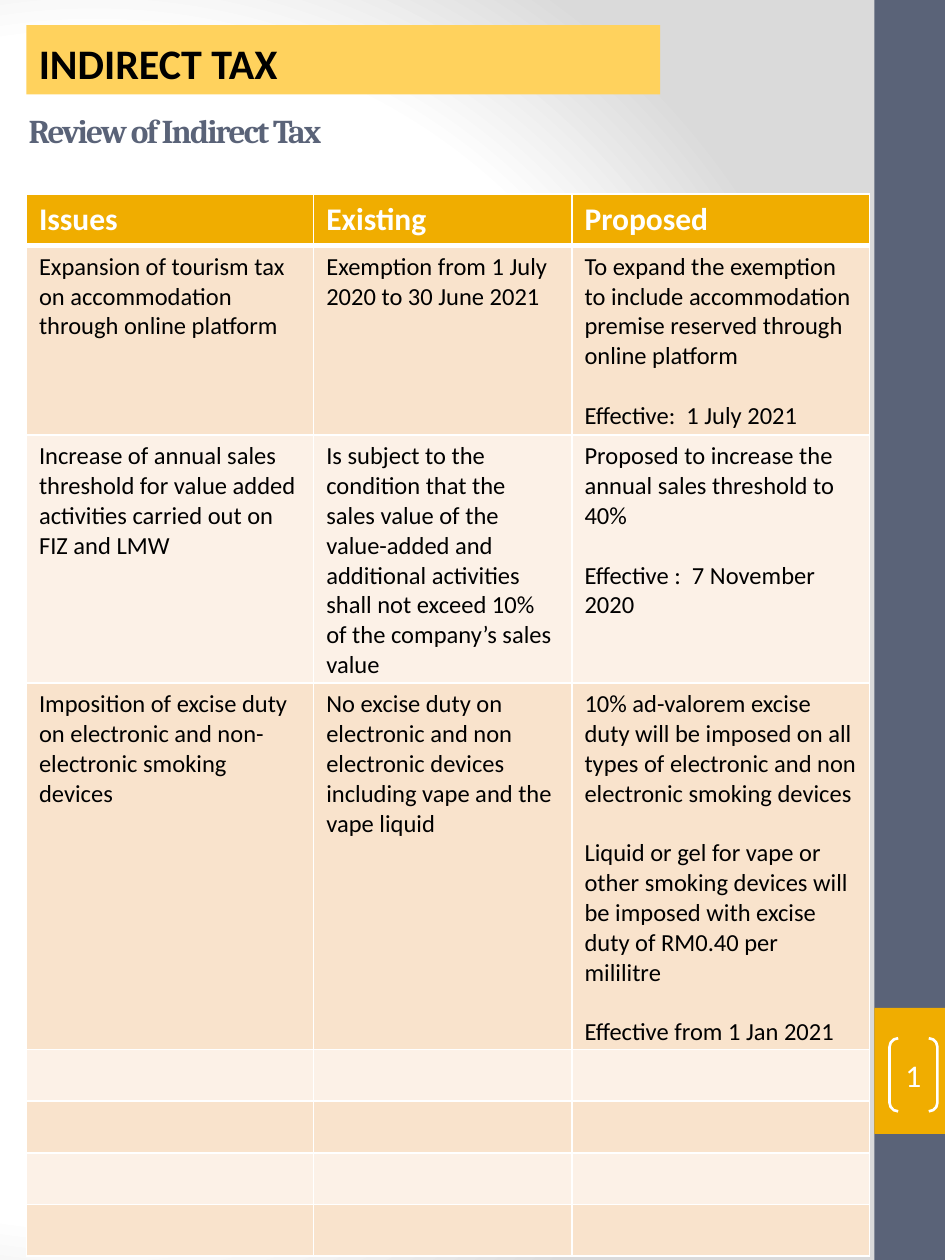
from lxml import etree
from pptx import Presentation
from pptx.dml.color import RGBColor
from pptx.enum.shapes import MSO_SHAPE
from pptx.enum.text import MSO_ANCHOR, PP_ALIGN
from pptx.oxml import parse_xml
from pptx.oxml.ns import qn
from pptx.util import Inches, Pt

RECT, BRACKET = MSO_SHAPE.RECTANGLE, MSO_SHAPE.DOUBLE_BRACKET
TOP, MIDDLE, BOTTOM = MSO_ANCHOR.TOP, MSO_ANCHOR.MIDDLE, MSO_ANCHOR.BOTTOM
LEFT, CENTER = PP_ALIGN.LEFT, PP_ALIGN.CENTER

COLORS = {
    "slate": "5A6378", "amber": "F0AD00", "gold": "FFD25D", "white": "FFFFFF",
    "black": "000000", "peach": "F9E3CC", "cream": "FCF1E7", "grey": "DADADA",
}
ROWS = [
    [["Issues"], ["Existing"], ["Proposed"]],
    [["Expansion of tourism tax on accommodation through online platform"],
     ["Exemption from 1 July 2020 to 30 June 2021"],
     ["To expand the exemption to include accommodation premise reserved through online platform",
      "Effective:  1 July 2021"]],
    [["Increase of annual sales threshold for value added activities carried out on FIZ and LMW"],
     ["Is subject to the condition that the sales value of the value-added and additional "
      "activities shall not exceed 10% of the company’s sales value"],
     ["Proposed to increase the annual sales threshold to 40%",
      "Effective :  7 November 2020"]],
    [["Imposition of excise duty on electronic and non-electronic smoking devices"],
     ["No excise duty on electronic and non electronic devices including vape and the vape liquid"],
     ["10% ad-valorem excise duty will be imposed on all types of electronic and non electronic "
      "smoking devices",
      "Liquid or gel for vape or other smoking devices will be imposed with excise duty of "
      "RM0.40 per mililitre",
      "Effective from 1 Jan 2021"]],
] + [[[], [], []]] * 4


class Page:
    """Holds the style and the slide being drawn."""

    def __init__(self, slide, font="Calibri"):
        self.slide, self.font = slide, font

    def color(self, name):
        return RGBColor.from_string(COLORS[name])

    def backdrop(self):
        fill = self.slide.background.fill
        fill.solid()
        solid = self.slide.element.find(".//" + qn("p:bgPr")).find(qn("a:solidFill"))
        stops = "".join(
            f'<a:gs pos="{pos}"><a:srgbClr val="{COLORS[name]}"/></a:gs>'
            for pos, name in ((0, "white"), (75000, "white"), (100000, "grey")))
        grad = parse_xml(
            '<a:gradFill xmlns:a="http://schemas.openxmlformats.org/drawingml/2006/main" '
            f'rotWithShape="1"><a:gsLst>{stops}</a:gsLst><a:path path="circle">'
            '<a:fillToRect l="20000" t="50000" r="100000" b="50000"/></a:path></a:gradFill>')
        solid.getparent().replace(solid, grad)

    def style(self, para, size, color, bold=False, font=None):
        for run in para.runs:
            run.font.name = font or self.font
            run.font.size = Pt(size)
            run.font.bold = bold
            run.font.color.rgb = self.color(color)

    def shape(self, kind, box, fill=None, line=None):
        shape = self.slide.shapes.add_shape(kind, *map(Inches, box))
        shape.shadow.inherit = False
        if fill:
            shape.fill.solid()
            shape.fill.fore_color.rgb = self.color(fill)
        else:
            shape.fill.background()
        if line:
            shape.line.color.rgb = self.color(line)
            shape.line.width = Pt(1.5)
        else:
            shape.line.fill.background()
        return shape

    def label(self, shape, text, size, color, anchor, align=LEFT, **look):
        frame = shape.text_frame
        frame.text, frame.word_wrap = text, True
        frame.vertical_anchor = anchor
        para = frame.paragraphs[0]
        para.alignment = align
        self.style(para, size, color, **look)
        return frame

    def title(self, text, box):
        holder = self.slide.shapes.add_textbox(*map(Inches, box))
        frame = self.label(holder, text, 19, "slate", TOP, bold=True, font="Cambria")
        frame.paragraphs[0].runs[0]._r.get_or_add_rPr().set("spc", "-100")

    def number(self, text, box):
        mark = self.shape(BRACKET, box, line="white")
        mark.adjustments[0] = 0.18
        frame = self.label(mark, text, 18, "white", MIDDLE, CENTER)
        frame.margin_left = frame.margin_right = 0
        frame.margin_top = frame.margin_bottom = 0

    def border(self, cell, widths):
        props = cell._tc.get_or_add_tcPr()
        for spot, (side, width) in enumerate(zip("LRTB", widths)):
            line = etree.Element(qn("a:ln" + side), w=str(Pt(width)))
            solid = etree.SubElement(line, qn("a:solidFill"))
            etree.SubElement(solid, qn("a:srgbClr"), val=COLORS["white"])
            props.insert(spot, line)

    def cell(self, cell, lines, row):
        head = row == 0
        cell.fill.solid()
        cell.fill.fore_color.rgb = self.color(
            "amber" if head else "peach" if row % 2 else "cream")
        self.border(cell, (1, 1, 3 if row == 1 else 1, 3 if head else 1))
        if not lines:
            return
        cell.text_frame.text = "\n".join(lines)
        for spot, para in enumerate(cell.text_frame.paragraphs):
            para.space_before = Pt(17 if spot else 0)
            self.style(para, 18 if head else 14, "white" if head else "black", head)

    def table(self, rows, left, top, widths, height):
        table = self.slide.shapes.add_table(
            len(rows), len(widths), Inches(left), Inches(top),
            Inches(sum(widths)), Inches(height * len(rows))).table
        table.horz_banding = False
        for col, width in zip(table.columns, widths):
            col.width = Inches(width)
        for row, texts in enumerate(rows):
            for col, lines in enumerate(texts):
                self.cell(table.cell(row, col), lines, row)


def main():
    deck = Presentation()
    deck.slide_width, deck.slide_height = Inches(7.5), Inches(10)
    page = Page(deck.slides.add_slide(deck.slide_layouts[6]))
    page.backdrop()
    page.shape(RECT, (6.94, 0, 0.56, 10), "slate")
    page.shape(RECT, (6.94, 8, 0.56, 1), "amber")
    page.title("Review of Indirect Tax", (0.13, 0.83, 6.77, 0.5))
    banner = page.shape(RECT, (0.21, 0.2, 5.03, 0.55), "gold")
    page.label(banner, "INDIRECT TAX", 24, "black", BOTTOM, bold=True)
    page.number("1", (7.06, 8.24, 0.38, 0.58))
    page.table(ROWS, 0.21, 1.54, (2.28, 2.05, 2.36), 0.41)
    deck.save("out.pptx")


if __name__ == "__main__":
    main()
